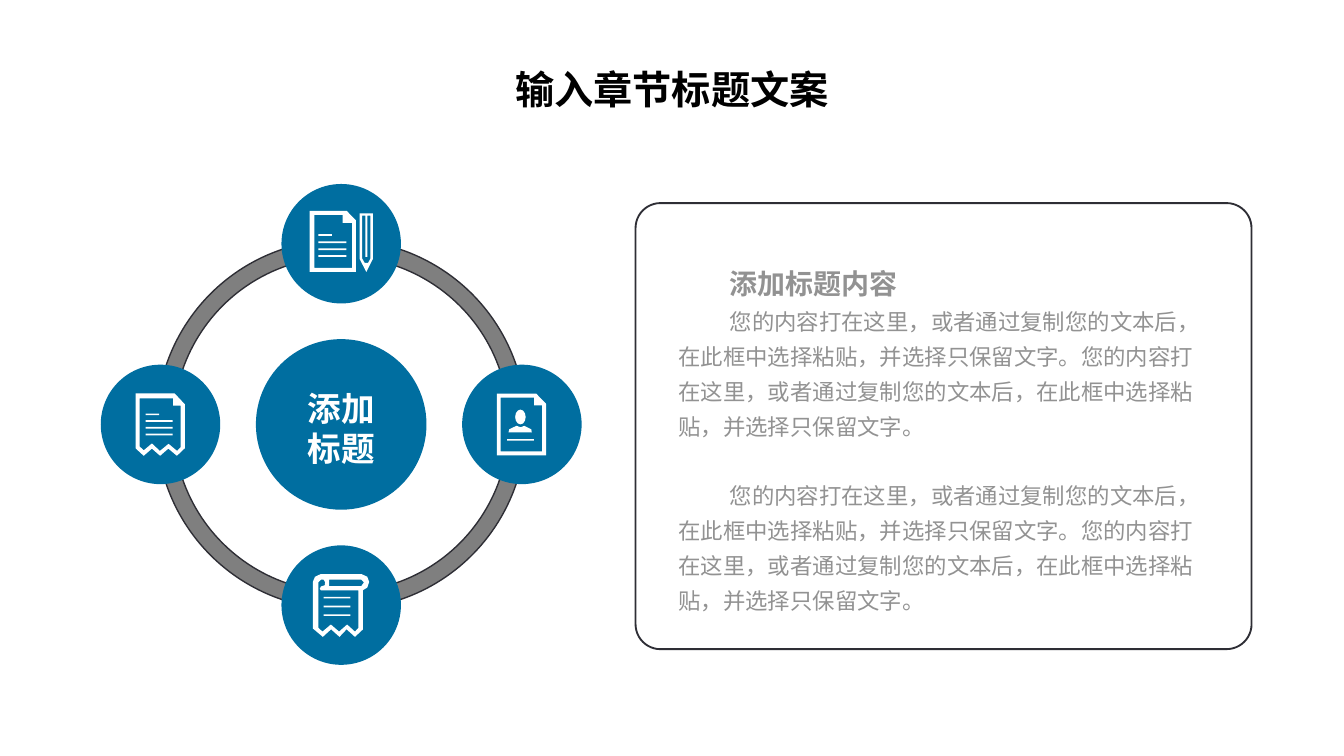
import pptx
import pptx.dml.color
import pptx.enum.shapes
import pptx.enum.text
import pptx.oxml.ns
import pptx.util
from lxml import etree

Pt = pptx.util.Pt
SHAPE = pptx.enum.shapes.MSO_SHAPE
ALIGN = pptx.enum.text.PP_ALIGN
COLORS = {"blue": "006EA0", "ring": "7F7F7F", "edge": "2E2E35",
          "body": "929292", "white": "FFFFFF", "black": "000000"}
FONT = "Noto Sans CJK SC"
HUB = (182.8, 227.4)
ORBIT = 96.8
BODY = ("您的内容打在这里，或者通过复制您的文本后，在此框中选择粘贴，并选择只保留文字。"
        "您的内容打在这里，或者通过复制您的文本后，在此框中选择粘贴，并选择只保留文字。")

RECEIPT = {
    "direction": (-1, 0),
    "outlines": [[
        [(-13.4, -16.6), (7.6, -16.6), (13, -10.8), (13, 12.8), (8.8, 16.8), (4.2, 13),
         (-0.2, 16.8), (-4.6, 13), (-9, 16.8), (-13.4, 12.8)],
        [(-11.2, -13.9), (6.8, -13.9), (6.8, -10.1), (10.8, -10.1), (10.8, 12.2), (8.9, 14.2),
         (4.3, 10.4), (-0.3, 14.2), (-4.6, 10.2), (-9, 13.9), (-11.2, 11.8)]]],
    "rules": [(-7.9, -5.4, 7.2), (-7.9, -1.8, 14.4), (-7.9, 1.8, 14.4), (-7.9, 5.4, 14.4)],
}
PAGE_AND_PENCIL = {
    "direction": (0, -1),
    "outlines": [[
        [(-16.9, -17.6), (2.9, -17.6), (7.8, -12.6), (7.8, 15.1), (-16.9, 15.1)],
        [(-14.4, -15.4), (0.7, -15.4), (0.7, -11.2), (5.8, -11.2), (5.8, 13), (-14.4, 13)]], [
        [(9.9, -16.3), (17, -16.3), (17, 8.2), (13.5, 15.1), (9.9, 8.2)],
        [(11.3, -15), (13, -15), (13, 7), (14, 7), (14, -15), (15.7, -15),
         (15.7, 8), (14.4, 10.3), (12.6, 10.3), (11.3, 8)]]],
    "rules": [(-12.2, -4.7, 7.2), (-12.2, -0.8, 15), (-12.2, 3, 15), (-12.2, 6.6, 15)],
}
PROFILE = {
    "direction": (1, 0),
    "outlines": [[
        [(-13.4, -16.6), (7.6, -16.6), (13, -11), (13, 16.6), (-13.4, 16.6)],
        [(-11.4, -14.4), (6.6, -14.4), (6.6, -10.2), (10.9, -10.2), (10.9, 14.4), (-11.4, 14.4)]], [
        [(-7.2, 4.3), (-6.8, 2.6), (-2.9, 0.7), (-0.7, 1.5), (1.3, 0.7), (5, 2.6), (5.3, 4.3)]]],
    "rules": [(-7.9, 8.3, 14.4)],
    "head": (-0.8, -4),
}
SCROLL = {
    "direction": (0, 1),
    "outlines": [[
        [(-11, -16.6), (11, -16.6), (14, -15.2), (15, -12.4), (14, -9.4), (11.7, -8), (11.7, 13),
         (7.4, 17), (2.9, 13), (-0.9, 17), (-5.4, 13), (-9.8, 17), (-15.1, 12.6), (-15.1, -12.6),
         (-14, -15.2)],
        [(-12.2, -12.2), (-10.8, -13.7), (-9.4, -13.7), (-8.6, -12.2), (-8.8, -10.6), (-10.8, -10),
         (-11.5, -8.7), (-10.8, -7.9), (9.3, -7.9), (9.3, 12.2), (7.4, 14.2), (3.2, 10.4),
         (-1.1, 14.2), (-5.5, 10.4), (-10, 14.2), (-12.2, 12.2)],
        [(-6.5, -13.7), (10.8, -13.7), (12.2, -12.2), (10.8, -10.2), (-6.5, -10.2)]]],
    "rules": [(-9.4, -4, 14.4), (-9.4, 0.8, 14.4), (-9.4, 5.4, 14.4)],
}


def rgb(name):
    return pptx.dml.color.RGBColor.from_string(COLORS[name])


def paint(shape, fill=None, line=None, weight=1):
    shape.shadow.inherit = False
    if fill:
        shape.fill.solid()
        shape.fill.fore_color.rgb = rgb(fill)
    else:
        shape.fill.background()
    if line:
        shape.line.color.rgb = rgb(line)
        shape.line.width = Pt(weight)
    else:
        shape.line.fill.background()


def add_block(slide, kind, box, **look):
    block = slide.shapes.add_shape(kind, *map(Pt, box))
    paint(block, **look)
    return block


def add_circle(slide, center, width, height, fill):
    box = (center[0] - width / 2, center[1] - height / 2, width, height)
    return add_block(slide, SHAPE.OVAL, box, fill=fill)


def write(paragraph, text, size=12, color="body", bold=False, align=ALIGN.LEFT,
          pitch=18.75, indent=0, after=0):
    paragraph.alignment = align
    paragraph.line_spacing = Pt(pitch)
    paragraph.space_after = Pt(after)
    properties = paragraph._p.get_or_add_pPr()
    properties.set("marL", "0")
    properties.set("indent", str(Pt(indent)))
    run = paragraph.add_run()
    run.text = text
    run.font.size = Pt(size)
    run.font.bold = bold
    run.font.color.rgb = rgb(color)
    run.font.name = FONT
    east_asian = etree.SubElement(run._r.get_or_add_rPr(), pptx.oxml.ns.qn("a:ea"))
    east_asian.set("typeface", FONT)


def fill_frame(frame, lines, **shared):
    frame.word_wrap = True
    for index, (text, own) in enumerate(lines):
        paragraph = frame.add_paragraph() if index else frame.paragraphs[0]
        write(paragraph, text, **shared, **own)


def add_text(slide, box, lines, **shared):
    fill_frame(slide.shapes.add_textbox(*map(Pt, box)).text_frame, lines, **shared)


def add_outline(slide, center, contours):
    placed = [[(Pt(center[0] + x), Pt(center[1] + y)) for x, y in contour]
              for contour in contours]
    builder = slide.shapes.build_freeform(*placed[0][0], scale=1.0)
    for index, contour in enumerate(placed):
        if index:
            builder.move_to(*contour[0])
        builder.add_line_segments(contour[1:], close=True)
    paint(builder.convert_to_shape(), fill="white")


def add_satellite(slide, icon):
    x, y = center = [hub + ORBIT * step for hub, step in zip(HUB, icon["direction"])]
    add_circle(slide, center, 64, 64, "blue")
    for contours in icon["outlines"]:
        add_outline(slide, center, contours)
    for left, middle, length in icon["rules"]:
        add_block(slide, SHAPE.RECTANGLE, (x + left, y + middle - 0.45, length, 0.9), fill="white")
    if "head" in icon:
        add_circle(slide, (x + icon["head"][0], y + icon["head"][1]), 5.6, 7.9, "white")


def add_ring(slide, diameter):
    box = (HUB[0] - diameter / 2, HUB[1] - diameter / 2, diameter, diameter)
    for start, end in ((108, 162), (54, 108), (0, 54), (162, 0)):
        arc = add_block(slide, SHAPE.BLOCK_ARC, box, fill="ring", line="edge", weight=0.75)
        for index, value in enumerate((start, end, 0.046)):
            arc.adjustments[index] = value


def main():
    deck = pptx.Presentation()
    deck.slide_width, deck.slide_height = Pt(720), Pt(405)
    slide = deck.slides.add_slide(deck.slide_layouts[6])

    hub = add_circle(slide, HUB, 91.4, 91.4, "blue")
    hub.text_frame.margin_top, hub.text_frame.margin_bottom = Pt(7), Pt(3)
    hub.text_frame.vertical_anchor = pptx.enum.text.MSO_ANCHOR.MIDDLE
    fill_frame(hub.text_frame, [("添加", {}), ("标题", {})], size=18, color="white",
               bold=True, align=ALIGN.CENTER, pitch=21.4)

    add_ring(slide, 198)
    for icon in (SCROLL, RECEIPT, PAGE_AND_PENCIL, PROFILE):
        add_satellite(slide, icon)

    panel = add_block(slide, SHAPE.ROUNDED_RECTANGLE, (340.5, 108.8, 330, 239), line="edge")
    panel.adjustments[0] = 0.056
    add_text(slide, (356.4, 119.5, 298.8, 211.7), [
        ("添加标题内容", {"size": 15, "bold": True, "pitch": 37.5}),
        (BODY, {"after": 18.75}),
        (BODY, {}),
    ], indent=27.4)
    add_text(slide, (246.2, 29.5, 227.5, 32.4), [("输入章节标题文案", {})], size=21,
             color="black", bold=True, align=ALIGN.CENTER, pitch=27)
    deck.save("out.pptx")


if __name__ == "__main__":
    main()
